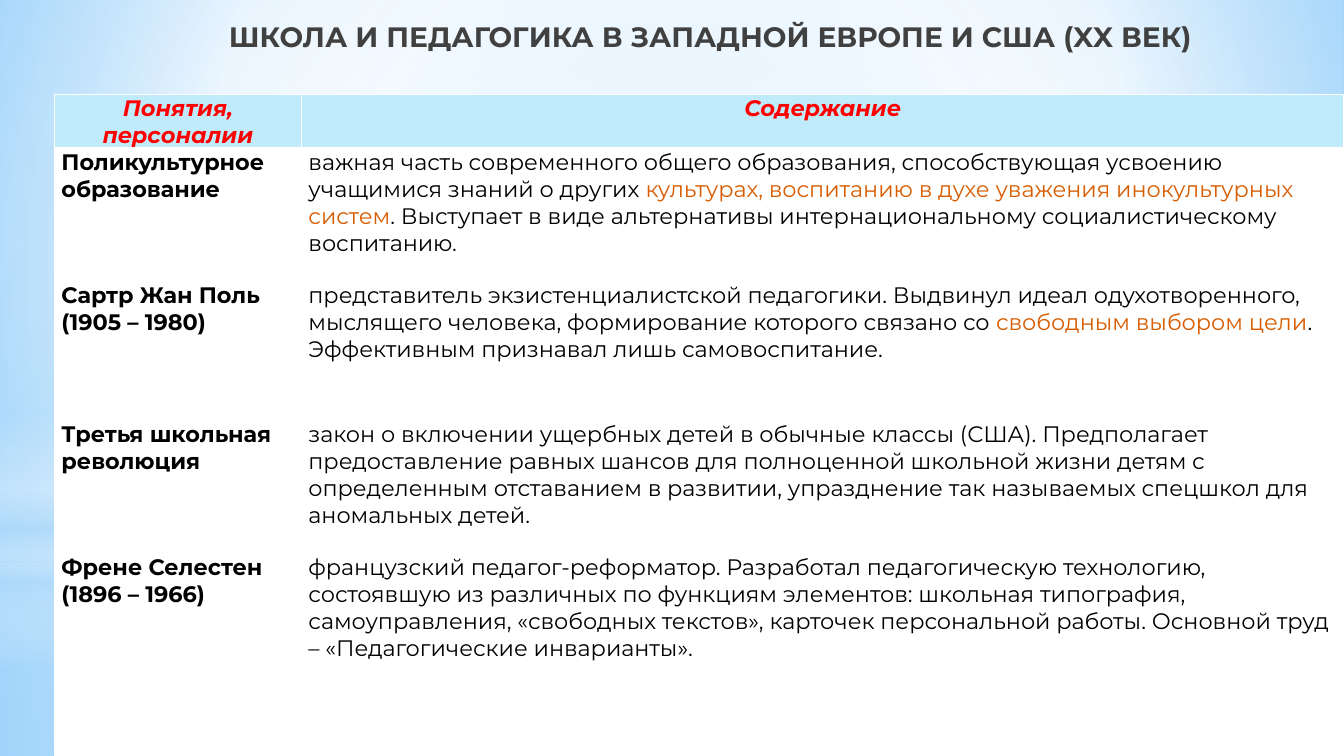
from pptx import Presentation, util as u
from pptx.dml.color import RGBColor
from pptx.enum import shapes, text
from pptx.oxml import parse_xml
from pptx.oxml.ns import qn

NS = 'xmlns:a="http://schemas.openxmlformats.org/drawingml/2006/main"'


class Theme:
    font = "Montserrat"
    title_size, body_size = 20, 16
    title, body, header, accent = "404040", "000000", "FF0000", "D85C00"
    header_fill, cell_fill, border = "BFEBFA", "FFFFFF", "FFFFFF"
    white, haze, sky, deep_sky = "FFFFFF", "B4DCFA", "9ED5FF", "5BB9FF"


class Deck:
    """Holds the theme and the current slide; lengths are percent of the slide."""

    def __init__(self, theme, width=13.33, height=7.5):
        self.t = theme
        self.prs = Presentation()
        self.prs.slide_width, self.prs.slide_height = u.Inches(width), u.Inches(height)
        self.s = self.prs.slides.add_slide(self.prs.slide_layouts[6])

    def x(self, share):
        return round(self.prs.slide_width * share / 100)

    def y(self, share):
        return round(self.prs.slide_height * share / 100)

    def box(self, left, top, width, height):
        return self.x(left), self.y(top), self.x(width), self.y(height)

    def gradient(self, fill, parent, stops, focus=None):
        """Circular gradient around focus (left, top, right, bottom), else top to bottom."""
        gs = "".join(
            f'<a:gs pos="{pos * 1000}"><a:srgbClr val="{color}">'
            f'<a:alpha val="{alpha * 1000}"/></a:srgbClr></a:gs>'
            for pos, color, alpha in stops)
        if focus:
            sides = " ".join(f'{k}="{v * 1000}"' for k, v in zip("ltrb", focus))
            shade = f'<a:path path="circle"><a:fillToRect {sides}/></a:path>'
        else:
            shade = '<a:lin ang="5400000" scaled="0"/>'
        fill.solid()
        solid = next(parent.iter(qn("a:solidFill")))
        solid.getparent().replace(solid, parse_xml(
            f'<a:gradFill {NS} rotWithShape="1"><a:gsLst>{gs}</a:gsLst>{shade}</a:gradFill>'))

    def background(self, stops, focus):
        bg = self.s.background
        self.gradient(bg.fill, self.s.element, stops, focus)

    def glow(self, kind, area, stops, focus=None):
        sp = self.s.shapes.add_shape(kind, *self.box(*area))
        sp.shadow.inherit = False
        sp.line.fill.background()
        self.gradient(sp.fill, sp.element.spPr, stops, focus)

    def run(self, p, words, color, **fmt):
        r = p.add_run()
        r.text = words
        fmt = {"name": self.t.font, "size": u.Pt(self.t.body_size),
               "bold": False, "italic": False, **fmt}
        for key, value in fmt.items():
            setattr(r.font, key, value)
        r.font.color.rgb = RGBColor.from_string(color)

    def title(self, words, area):
        tf = self.s.shapes.add_textbox(*self.box(*area)).text_frame
        tf.word_wrap = True
        p = tf.paragraphs[0]
        p.alignment = text.PP_ALIGN.RIGHT
        self.run(p, words, self.t.title, size=u.Pt(self.t.title_size), bold=True)

    def cell(self, cell, runs, fill, bottom=1, align=text.PP_ALIGN.LEFT):
        margins = {"margin_left": 0.07, "margin_right": 0.07, "margin_top": 0, "margin_bottom": 0}
        for key, value in margins.items():
            setattr(cell, key, u.Inches(value))
        cell.fill.solid()
        cell.fill.fore_color.rgb = RGBColor.from_string(fill)
        tcPr = cell._tc.get_or_add_tcPr()
        for i, (side, width) in enumerate(zip("LRTB", (1, 1, 1, bottom))):
            tcPr.insert(i, parse_xml(
                f'<a:ln{side} {NS} w="{u.Pt(width)}"><a:solidFill>'
                f'<a:srgbClr val="{self.t.border}"/></a:solidFill></a:ln{side}>'))
        p = cell.text_frame.paragraphs[0]
        p.alignment = align
        for words, color, fmt in runs:
            self.run(p, words, color, **fmt)

    def table(self, header, rows, area, columns, heights):
        t = self.t
        table = self.s.shapes.add_table(len(rows) + 1, len(columns), *self.box(*area)).table
        table.first_row = table.horz_banding = False
        for column, width in zip(table.columns, columns):
            column.width = self.x(width)
        for row, height in zip(table.rows, heights):
            row.height = self.y(height)
        for c, words in enumerate(header):
            self.cell(table.cell(0, c), [(words, t.header, {"bold": True, "italic": True})],
                      t.header_fill, bottom=3, align=text.PP_ALIGN.CENTER)
        for n, (term, *parts) in enumerate(rows, 1):
            self.cell(table.cell(n, 0), [(term, t.body, {"bold": True})], t.cell_fill)
            # Every second part of a description is highlighted
            runs = [(words, t.accent if i % 2 else t.body, {}) for i, words in enumerate(parts)]
            self.cell(table.cell(n, 1), runs, t.cell_fill)


HEADER = ("Понятия, персоналии", "Содержание")
ROWS = [
    ("Поликультурное образование",
     "важная часть современного общего образования, способствующая усвоению учащимися "
     "знаний о других ",
     "культурах, воспитанию в духе уважения инокультурных систем",
     ". Выступает в виде альтернативы интернациональному социалистическому воспитанию."),
    ("Сартр Жан Поль (1905 – 1980)",
     "представитель экзистенциалистской педагогики. Выдвинул идеал одухотворенного, "
     "мыслящего человека, формирование которого связано со ",
     "свободным выбором цели",
     ". Эффективным признавал лишь самовоспитание."),
    ("Третья школьная революция",
     "закон о включении ущербных детей в обычные классы (США). Предполагает предоставление "
     "равных шансов для полноценной школьной жизни детям с определенным отставанием в "
     "развитии, упразднение так называемых спецшкол для аномальных детей."),
    ("Френе Селестен (1896 – 1966)",
     "французский педагог-реформатор. Разработал педагогическую технологию, состоявшую из "
     "различных по функциям элементов: школьная типография, самоуправления, «свободных "
     "текстов», карточек персональной работы. Основной труд – «Педагогические инварианты»."),
]


def main():
    t = Theme
    deck = Deck(t)
    rect, oval = shapes.MSO_SHAPE.RECTANGLE, shapes.MSO_SHAPE.OVAL
    center = (50, 50, 50, 50)

    # Sky background and its layers of light
    deck.background([(0, t.sky, 100), (60, t.white, 100), (100, t.deep_sky, 100)],
                    (20, 10, 20, 60))
    deck.glow(rect, (0, 74.4, 100, 25.6),
              [(0, t.white, 91), (37, t.white, 76), (100, t.haze, 79)], center)
    deck.glow(rect, (0, 0, 100, 74.4),
              [(0, t.white, 89), (48, t.white, 62), (100, t.haze, 79)], center)
    deck.glow(rect, (0, 54.93, 100, 33.33),
              [(0, t.white, 0), (29, t.white, 30), (45, t.haze, 40),
               (55, t.white, 26), (65, t.haze, 60), (100, t.white, 0)])
    deck.glow(oval, (0, 23.33, 100, 74.4), [(0, t.white, 100), (56, t.white, 0)], center)

    # Title and table of terms
    deck.title("ШКОЛА И ПЕДАГОГИКА В ЗАПАДНОЙ ЕВРОПЕ И США (XX ВЕК)",
               (10.65, 1.87, 78.77, 7.87))
    deck.table(HEADER, ROWS, (4.05, 12.53, 95.95, 88.54),
               columns=(18.38, 77.57), heights=(7.07, 17.6, 18.4, 17.6, 27.87))
    deck.prs.save("out.pptx")


if __name__ == "__main__":
    main()
